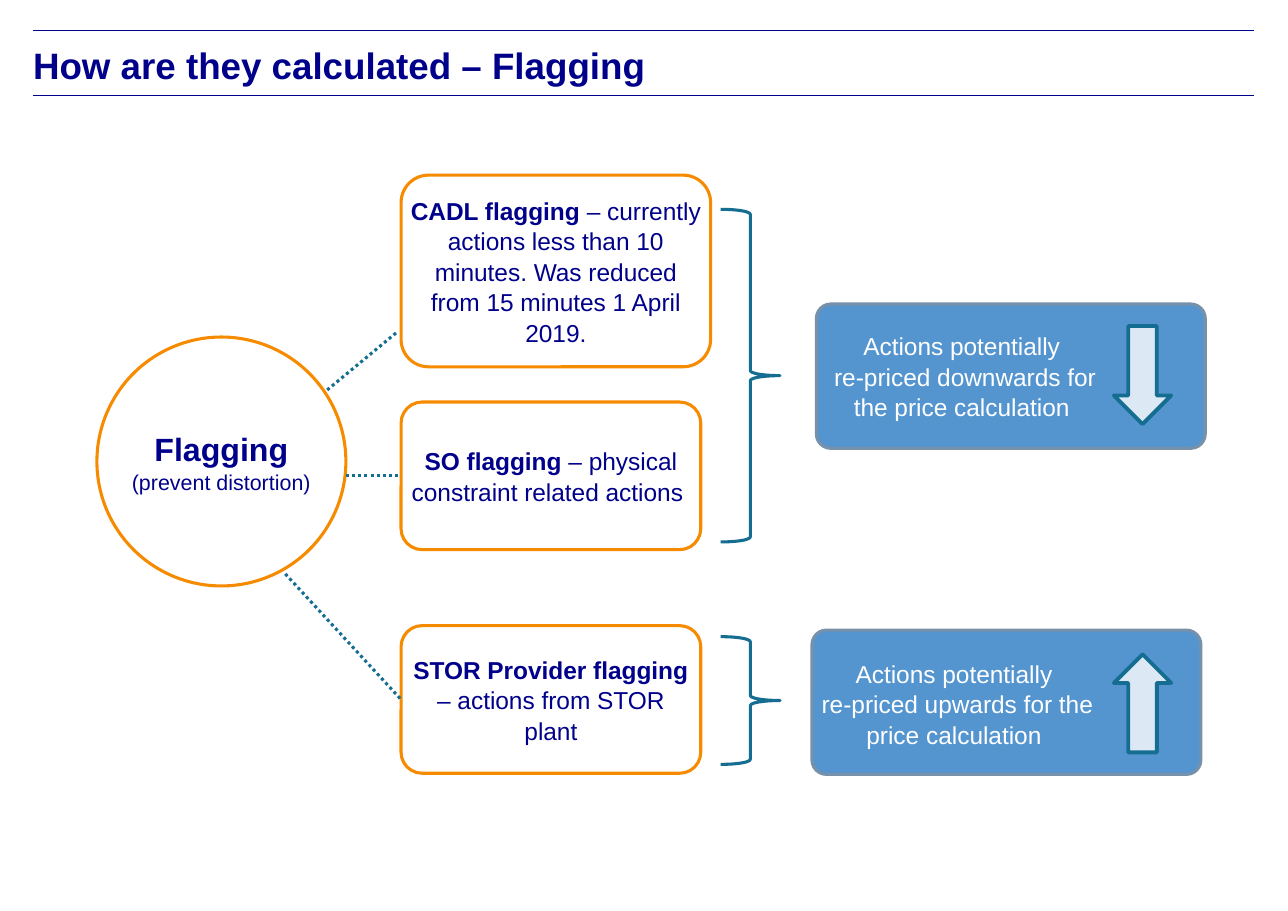
from lxml import etree
from pptx import Presentation
from pptx import util as u
from pptx.dml.color import RGBColor
from pptx.enum import dml, shapes, text
from pptx.oxml.ns import qn

NAVY, ORANGE, TEAL, WHITE = "00008B", "F68B00", "156E91", "FFFFFF"
BLUE, BLUE_GREY = "5495D0", "7691A9"
SHAPE = shapes.MSO_SHAPE
FLAG_LEFT, BRACE_LEFT, ARROW_LEFT = 3.64, 6.54, 10.11


def colour(value):
    return RGBColor.from_string(value)


def inches(*lengths):
    return [u.Inches(length) for length in lengths]


def set_line(line, line_colour, width, dash=None):
    line.color.rgb = colour(line_colour)
    line.width = u.Pt(width)
    if dash:
        line.dash_style = dash


def write(shape, paragraphs, align=text.PP_ALIGN.CENTER, inset=0, **overrides):
    """Fill a shape with paragraphs, each a list of (words, size, bold, colour) runs."""
    frame = shape.text_frame
    margin = u.Inches(inset)
    values = {
        "word_wrap": True,
        "vertical_anchor": text.MSO_ANCHOR.MIDDLE,
        "margin_left": margin,
        "margin_right": margin,
        "margin_top": margin,
        "margin_bottom": margin,
    }
    for name, value in {**values, **overrides}.items():
        setattr(frame, name, value)
    for index, runs in enumerate(paragraphs):
        paragraph = frame.add_paragraph() if index else frame.paragraphs[0]
        paragraph.alignment = align
        paragraph.line_spacing = 1.04
        for words, size, bold, font_colour in runs:
            for number, row in enumerate(words.split("\n")):
                if number:
                    paragraph.add_line_break()
                run = paragraph.add_run()
                run.text = row
                font_values = {"name": "Arial", "size": u.Pt(size), "bold": bold}
                for name, value in font_values.items():
                    setattr(run.font, name, value)
                run.font.color.rgb = colour(font_colour)


def add_box(slide, kind, place, fill, line_colour, width=2, corner=None):
    shape = slide.shapes.add_shape(kind, *inches(*place))
    shape.shadow.inherit = False
    if fill:
        shape.fill.solid()
        shape.fill.fore_color.rgb = colour(fill)
    else:
        shape.fill.background()
    set_line(shape.line, line_colour, width)
    if corner:
        shape.adjustments[0] = corner
    return shape


def add_text(slide, place, paragraphs, **options):
    write(slide.shapes.add_textbox(*inches(*place)), paragraphs, **options)


def add_line(slide, start, end, line_colour, width, dash=None):
    connector = slide.shapes.add_connector(
        shapes.MSO_CONNECTOR.STRAIGHT, *inches(*start, *end))
    etree.SubElement(connector.line._get_or_add_ln().getparent(), qn("a:effectLst"))
    set_line(connector.line, line_colour, width, dash)
    return connector


def add_title(slide):
    for y in (0.28, 0.87):
        add_line(slide, (0.3, y), (11.38, y), NAVY, 0.5)
    title = "How are they calculated – Flagging"
    add_text(slide, (0.3, 0.35, 11.08, 0.46), [[(title, 24, True, NAVY)]],
             align=text.PP_ALIGN.LEFT)


def add_flag(slide, place, heading, detail, inset):
    flag = add_box(slide, SHAPE.ROUNDED_RECTANGLE, place, WHITE, ORANGE, corner=0.143)
    write(flag, [[(heading, 16, True, NAVY), (detail, 16, False, NAVY)]], inset=inset)
    return flag


def add_dotted_link(slide, start, end, flag=None):
    """Draw a dotted line, joined to the left side of flag if one is given."""
    link = add_line(slide, start, end, TEAL, 2, dml.MSO_LINE.ROUND_DOT)
    if flag:
        link.end_connect(flag, 1)


def add_outcome(slide, box_place, text_place, words, arrow_top, rotation):
    add_box(slide, SHAPE.ROUNDED_RECTANGLE, box_place, BLUE, BLUE_GREY, corner=0.1)
    add_text(slide, text_place, [[(words, 16, False, WHITE)]])
    arrow = add_box(slide, SHAPE.DOWN_ARROW, (ARROW_LEFT, arrow_top, 0.52, 0.89),
                    WHITE, TEAL, width=2.5)
    arrow.rotation = rotation
    fill = arrow.fill._xPr.find(qn("a:solidFill"))
    etree.SubElement(fill[0], qn("a:alpha"), val="80000")


def main():
    presentation = Presentation()
    presentation.slide_width, presentation.slide_height = inches(11.69, 8.27)
    slide = presentation.slides.add_slide(presentation.slide_layouts[6])
    add_title(slide)

    circle = add_box(slide, SHAPE.OVAL, (0.88, 3.06, 2.26, 2.26), WHITE, ORANGE)
    write(circle, [[("Flagging", 21, True, NAVY)],
                   [("(prevent distortion)", 14, False, NAVY)]], word_wrap=False)

    add_flag(slide, (FLAG_LEFT, 1.59, 2.81, 1.74), "CADL flagging ",
             "– currently actions less than 10 minutes. "
             "Was reduced from 15 minutes 1 April 2019.", 0)
    so_flag = add_flag(slide, (FLAG_LEFT, 3.65, 2.72, 1.34), "SO flagging",
                       " – physical constraint related actions ", 0.02)
    stor_flag = add_flag(slide, (FLAG_LEFT, 5.68, 2.72, 1.34),
                         "STOR Provider flagging ", "– actions from STOR plant", 0.02)

    add_dotted_link(slide, (2.97, 3.54), (3.61, 3.01))
    add_dotted_link(slide, (3.14, 4.32), (FLAG_LEFT, 4.32), so_flag)
    add_dotted_link(slide, (2.59, 5.21), (FLAG_LEFT, 6.35), stor_flag)

    for top, height in ((1.9, 3.02), (5.78, 1.16)):
        add_box(slide, SHAPE.RIGHT_BRACE, (BRACE_LEFT, top, 0.54, height), None, TEAL)

    add_outcome(slide, (7.41, 2.76, 3.53, 1.31), (7.41, 3.05, 2.7, 0.72),
                "Actions potentially \nre-priced downwards for the price calculation ",
                2.96, 0)
    add_outcome(slide, (7.37, 5.72, 3.53, 1.31), (7.41, 6.03, 2.56, 0.71),
                "Actions potentially \nre-priced upwards for the price calculation ",
                5.94, 180)
    presentation.save("out.pptx")


if __name__ == "__main__":
    main()
